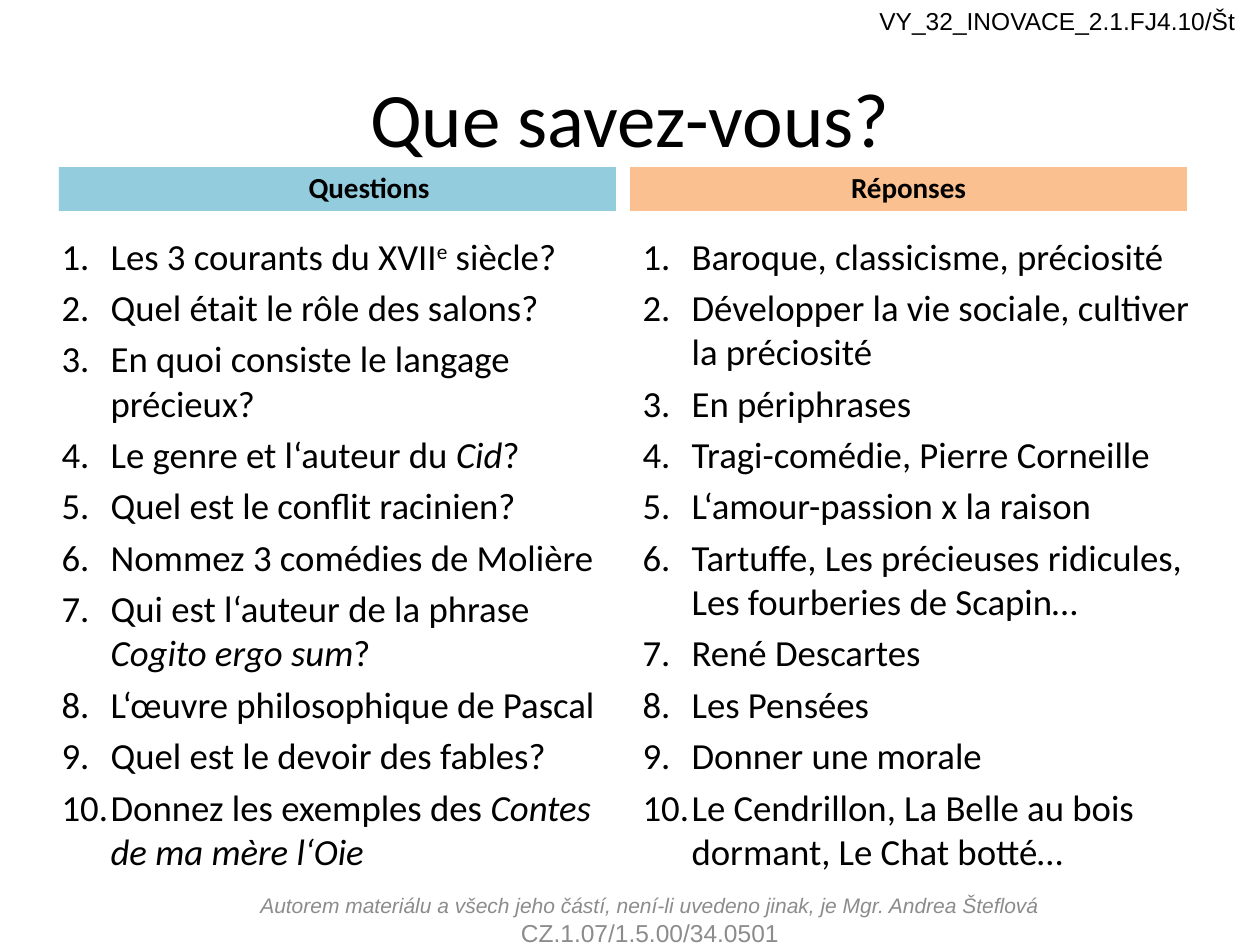
from lxml import etree
from pptx import Presentation
from pptx.dml.color import RGBColor
from pptx.enum.text import MSO_ANCHOR, MSO_AUTO_SIZE, PP_ALIGN
from pptx.oxml.ns import qn
from pptx.util import Emu, Pt

MID, LOW, TOP = MSO_ANCHOR.MIDDLE, MSO_ANCHOR.BOTTOM, MSO_ANCHOR.TOP
LEFT, MIDST = PP_ALIGN.LEFT, PP_ALIGN.CENTER
FIXED = MSO_AUTO_SIZE.NONE
COMPARE = 4
SCALE = 914400 / 126

ITAL = {"italic": True}
ASKS = [
    ["Les 3 courants du XVII", ("e", "sup"), " siècle?"],
    ["Quel était le rôle des salons?"],
    ["En quoi consiste le langage précieux?"],
    ["Le genre et l‘auteur du ", ("Cid", ITAL), "?"],
    ["Quel est le conflit racinien?"],
    ["Nommez 3 comédies de Molière"],
    ["Qui est l‘auteur de la phrase ", ("Cogito ergo sum", ITAL), "?"],
    ["L‘œuvre philosophique de Pascal"],
    ["Quel est le devoir des fables?"],
    ["Donnez les exemples des ", ("Contes de ma mère l‘Oie", ITAL)],
]
REPLIES = [
    ["Baroque, classicisme, préciosité"],
    ["Développer la vie sociale, cultiver la préciosité"],
    ["En périphrases"],
    ["Tragi-comédie, Pierre Corneille"],
    ["L‘amour-passion x la raison"],
    ["Tartuffe, Les précieuses ridicules, Les fourberies de Scapin…"],
    ["René Descartes"],
    ["Les Pensées"],
    ["Donner une morale"],
    ["Le Cendrillon, La Belle au bois dormant, Le Chat botté…"],
]


def px(n):
    return Emu(round(n * SCALE))


def color(code):
    return RGBColor.from_string(code)


def place(shape, box, anchor):
    """Move a shape to its px box and set up its text frame."""
    for name, n in zip(("left", "top", "width", "height"), box):
        setattr(shape, name, px(n))
    frame = shape.text_frame
    traits = {"word_wrap": True, "auto_size": FIXED, "vertical_anchor": anchor}
    for name, value in traits.items():
        setattr(frame, name, value)
    return frame


def write(par, parts, size, face="Calibri", tint="000000", align=LEFT, **style):
    """Fill a paragraph; a part is plain text or a (text, style) pair."""
    par.alignment = align
    for part in parts:
        text, extra = (part, {}) if isinstance(part, str) else part
        run = par.add_run()
        run.text = text
        if extra == "sup":
            run.font._element.set("baseline", "30000")
            extra = {}
        look = {"name": face, "size": Pt(size), **style, **extra}
        for name, value in look.items():
            setattr(run.font, name, value)
        run.font.color.rgb = color(tint)


def indent(par, left, first):
    props = par._p.get_or_add_pPr()
    props.set("marL", str(px(left)))
    props.set("indent", str(px(first)))
    return props


def head(shape, box, text, fill):
    frame = place(shape, box, LOW)
    shape.fill.solid()
    shape.fill.fore_color.rgb = color(fill)
    par = frame.paragraphs[0]
    write(par, [text], 16.6, align=MIDST, bold=True)
    return par


def items(shape, box, rows):
    """Fill a placeholder with a numbered list."""
    frame = place(shape, box, TOP)
    for i, parts in enumerate(rows):
        par = frame.add_paragraph() if i else frame.paragraphs[0]
        write(par, parts, 21)
        par.space_before = Pt(4.2)
        props = indent(par, 49, -49)
        font = etree.SubElement(props, qn("a:buFont"))
        font.set("typeface", "+mj-lt")
        mark = etree.SubElement(props, qn("a:buAutoNum"))
        mark.set("type", "arabicPeriod")


def label(slide, box, anchor):
    return place(slide.shapes.add_textbox(0, 0, 0, 0), box, anchor)


def main():
    deck = Presentation()
    deck.slide_width, deck.slide_height = px(1260), px(945)
    slide = deck.slides.add_slide(deck.slide_layouts[COMPARE])
    title, ask, asks, reply, replies = list(slide.placeholders)[:5]

    frame = place(title, (63, 38, 1134, 157), MID)
    write(frame.paragraphs[0], ["Que savez-vous?"], 44, align=MIDST)

    par = head(ask, (59, 167, 557, 44), "Questions", "93CDDD")
    par.level = 1
    indent(par, 99, -36)
    head(reply, (630, 167, 557, 44), "Réponses", "FAC090")
    items(asks, (49, 227, 571, 659), ASKS)
    items(replies, (630, 227, 581, 659), REPLIES)

    foot = label(slide, (246, 895, 808, 50), MID)
    credit = "Autorem materiálu a všech jeho částí, není-li uvedeno jinak, je Mgr. Andrea Šteflová"
    gray = {"face": "Arial", "tint": "8C8C8C", "align": MIDST}
    write(foot.paragraphs[0], [credit], 12, italic=True, **gray)
    write(foot.add_paragraph(), ["CZ.1.07/1.5.00/34.0501"], 14, **gray)

    code = label(slide, (867, 0, 393, 43), TOP)
    write(code.paragraphs[0], ["VY_32_INOVACE_2.1.FJ4.10/Št"], 14, face="Arial")
    deck.save("out.pptx")


if __name__ == "__main__":
    main()
